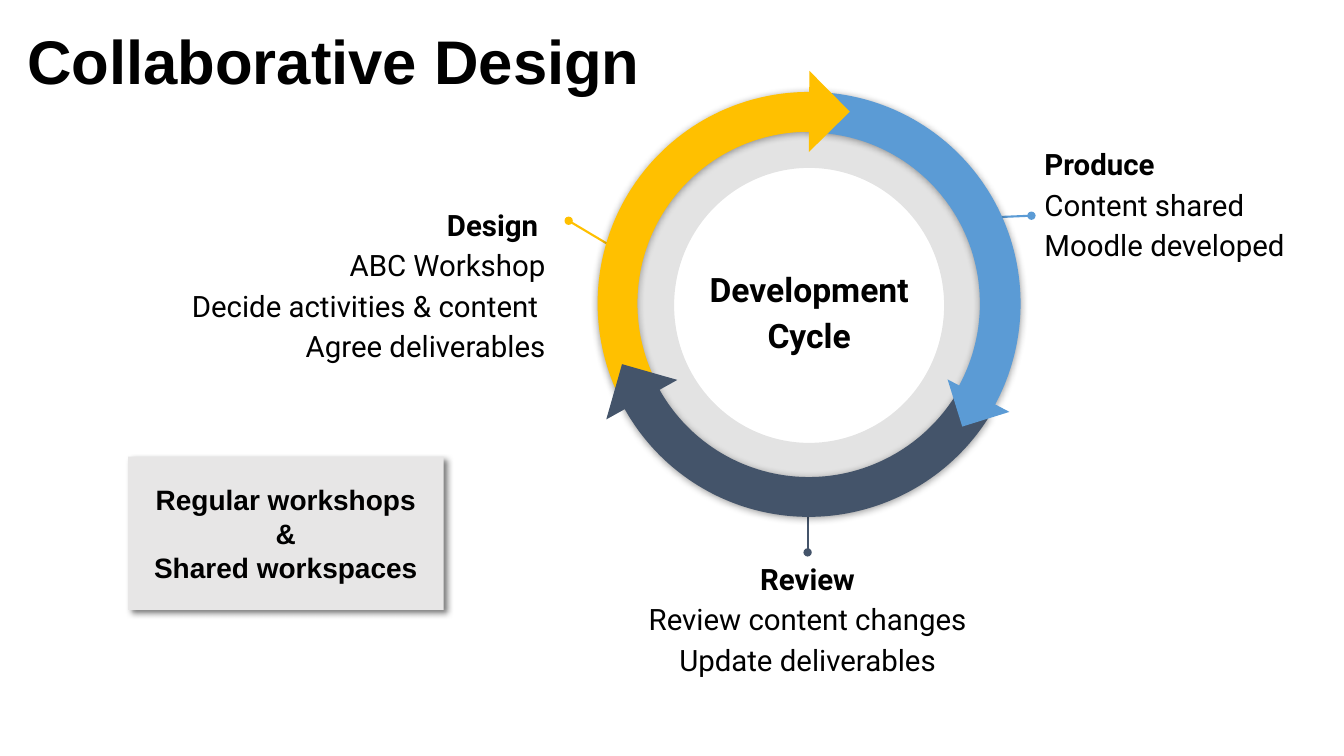
from dataclasses import dataclass

from lxml.etree import SubElement
from pptx import Presentation
from pptx.dml.color import RGBColor
from pptx.enum.shapes import MSO_CONNECTOR, MSO_SHAPE
from pptx.enum.text import MSO_ANCHOR, PP_ALIGN
from pptx.oxml.ns import qn
from pptx.util import Inches, Pt


@dataclass(frozen=True)
class Theme:
    black: str = "000000"
    panel: str = "E7E6E6"
    design: str = "FFC000"
    produce: str = "5B9BD5"
    review: str = "44546A"
    heading_font: str = "Arial"
    body_font: str = "Roboto"
    title_size: int = 44
    centre_size: int = 24
    label_size: int = 21
    panel_size: int = 20


THEME = Theme()
# Shadows: opacity in percent, blur and distance in points, direction in degrees
PANEL_SHADOW = (50, 4.5, 3.8, 45)
ARC_SHADOW = (40, 5.6, 0.8, 90)


def add_shadow(shape, opacity, blur, distance, direction):
    effects = shape._element.spPr.find(qn("a:effectLst"))
    shadow = SubElement(effects, qn("a:outerShdw"), blurRad=str(Pt(blur)),
                        dist=str(Pt(distance)), dir=str(direction * 60000),
                        algn="ctr", rotWithShape="0")
    color = SubElement(shadow, qn("a:srgbClr"), val=THEME.black)
    SubElement(color, qn("a:alpha"), val=str(opacity * 1000))


def add_figure(page, kind, bounds, color, rotation=0, adjustments=(),
               shadow=None, flipped=False, opacity=None):
    shape = page.shapes.add_shape(kind, *map(Inches, bounds))
    shape.rotation = rotation
    for index, value in enumerate(adjustments):
        shape.adjustments[index] = value
    shape.fill.solid()
    shape.fill.fore_color.rgb = RGBColor.from_string(color)
    shape.line.fill.background()
    shape.shadow.inherit = False
    properties = shape._element.spPr
    if shadow:
        add_shadow(shape, *shadow)
    if flipped:
        properties.find(qn("a:xfrm")).set("flipH", "1")
    if opacity:
        fill_color = properties.find(qn("a:solidFill")).find(qn("a:srgbClr"))
        SubElement(fill_color, qn("a:alpha"), val=str(opacity * 1000))
    return shape


def write_text(box, lines, font, size, align, spacing, inset,
               anchor=MSO_ANCHOR.TOP, bold_lines=1):
    frame = box.text_frame
    frame.word_wrap = True
    frame.vertical_anchor = anchor
    frame.margin_left = frame.margin_right = Inches(inset[0])
    frame.margin_top = frame.margin_bottom = Inches(inset[1])
    for index, line in enumerate(lines):
        para = frame.paragraphs[0] if index == 0 else frame.add_paragraph()
        para.alignment = align
        para.line_spacing = spacing
        para.space_before = Pt(0)
        span = para.add_run()
        span.text = line
        span.font.name = font
        span.font.size = Pt(size)
        span.font.bold = index < bold_lines
        span.font.color.rgb = RGBColor.from_string(THEME.black)


def add_label(shapes, bounds, lines, align, size=THEME.label_size,
              anchor=MSO_ANCHOR.TOP):
    box = shapes.add_textbox(*map(Inches, bounds))
    write_text(box, lines, THEME.body_font, size, align, 1.15,
               (0.13, 0.13), anchor)


def add_pointer(shapes, start, end, color):
    pointer = shapes.add_connector(MSO_CONNECTOR.STRAIGHT,
                                   *map(Inches, start + end))
    pointer.line.color.rgb = RGBColor.from_string(color)
    pointer.line.width = Pt(1.5)
    properties = pointer._element.spPr
    SubElement(properties.find(qn("a:ln")), qn("a:headEnd"), type="oval")
    SubElement(properties, qn("a:effectLst"))


def add_stage(page, start, end, color, bounds, lines, align):
    stage = page.shapes.add_group_shape()
    add_pointer(stage.shapes, start, end, color)
    add_label(stage.shapes, bounds, lines, align)


def add_arc(page, left, color, rotation, adjustments, flipped=True):
    add_figure(page, MSO_SHAPE.BLOCK_ARC, (left, 0.91, 4.2, 4.22), color,
               rotation, adjustments, ARC_SHADOW, flipped)


def add_arrow_tip(page, left, top, size, color, rotation):
    add_figure(page, MSO_SHAPE.RIGHT_TRIANGLE, (left, top, size, size),
               color, rotation)


def add_cycle(page):
    # Arcs and tips overlap, so each tip follows the arc it must cover
    add_arc(page, 5.92, THEME.produce, 30.3, (144.144, 0.007, 0.096),
            flipped=False)
    add_arc(page, 5.93, THEME.design, 329.7, (143.486, 214.729, 0.094))
    add_arrow_tip(page, 7.74, 0.82, 0.57, THEME.design, 225.3)
    add_arc(page, 5.93, THEME.review, 210.3, (143.162, 215.027, 0.094))
    add_arrow_tip(page, 9.46, 3.68, 0.49, THEME.produce, 342.7)
    add_arrow_tip(page, 6.08, 3.68, 0.57, THEME.review, 105.9)


def set_title(page, text):
    title = page.shapes.title
    title.left, title.top = Inches(0.17), Inches(-0.08)
    title.width, title.height = Inches(12), Inches(1.45)
    write_text(title, [text], THEME.heading_font, THEME.title_size,
               PP_ALIGN.LEFT, 0.9, (0.1, 0.05), MSO_ANCHOR.MIDDLE)


def main():
    deck = Presentation()
    deck.slide_width, deck.slide_height = Inches(13.33), Inches(7.5)
    page = deck.slides.add_slide(deck.slide_layouts[5])
    set_title(page, "Collaborative Design")

    # Workshop panel
    panel = add_figure(page, MSO_SHAPE.RECTANGLE, (1.27, 4.53, 3.13, 1.52),
                       THEME.panel, shadow=PANEL_SHADOW)
    write_text(panel, ["Regular workshops", "&", "Shared workspaces"],
               THEME.heading_font, THEME.panel_size, PP_ALIGN.CENTER, 1.0,
               (0.1, 0.1), MSO_ANCHOR.MIDDLE, bold_lines=3)

    # Inner ring
    add_figure(page, MSO_SHAPE.DONUT, (6.05, 1.03, 3.95, 4), THEME.black,
               adjustments=(0.161,), opacity=11)

    # Stage labels with their pointers
    add_stage(page, (5.64, 2.19), (6.31, 2.59), THEME.design,
              (0.93, 1.87, 4.61, 2.03),
              ["Design ", "ABC Workshop", "Decide activities & content ",
               "Agree deliverables"], PP_ALIGN.RIGHT)
    add_stage(page, (10.23, 2.14), (9.51, 2.17), THEME.produce,
              (10.23, 1.27, 2.96, 1.74),
              ["Produce", "Content shared", "Moodle developed"],
              PP_ALIGN.LEFT)
    add_stage(page, (8.01, 5.48), (8.01, 4.76), THEME.review,
              (5.91, 5.38, 4.2, 0.95),
              ["Review", "Review content changes", "Update deliverables"],
              PP_ALIGN.CENTER)

    # Centre caption and the cycle around it
    add_label(page.shapes, (6.9, 2.43, 2.25, 1.27), ["Development Cycle"],
              PP_ALIGN.CENTER, THEME.centre_size, MSO_ANCHOR.MIDDLE)
    add_cycle(page)
    deck.save("out.pptx")


if __name__ == "__main__":
    main()
